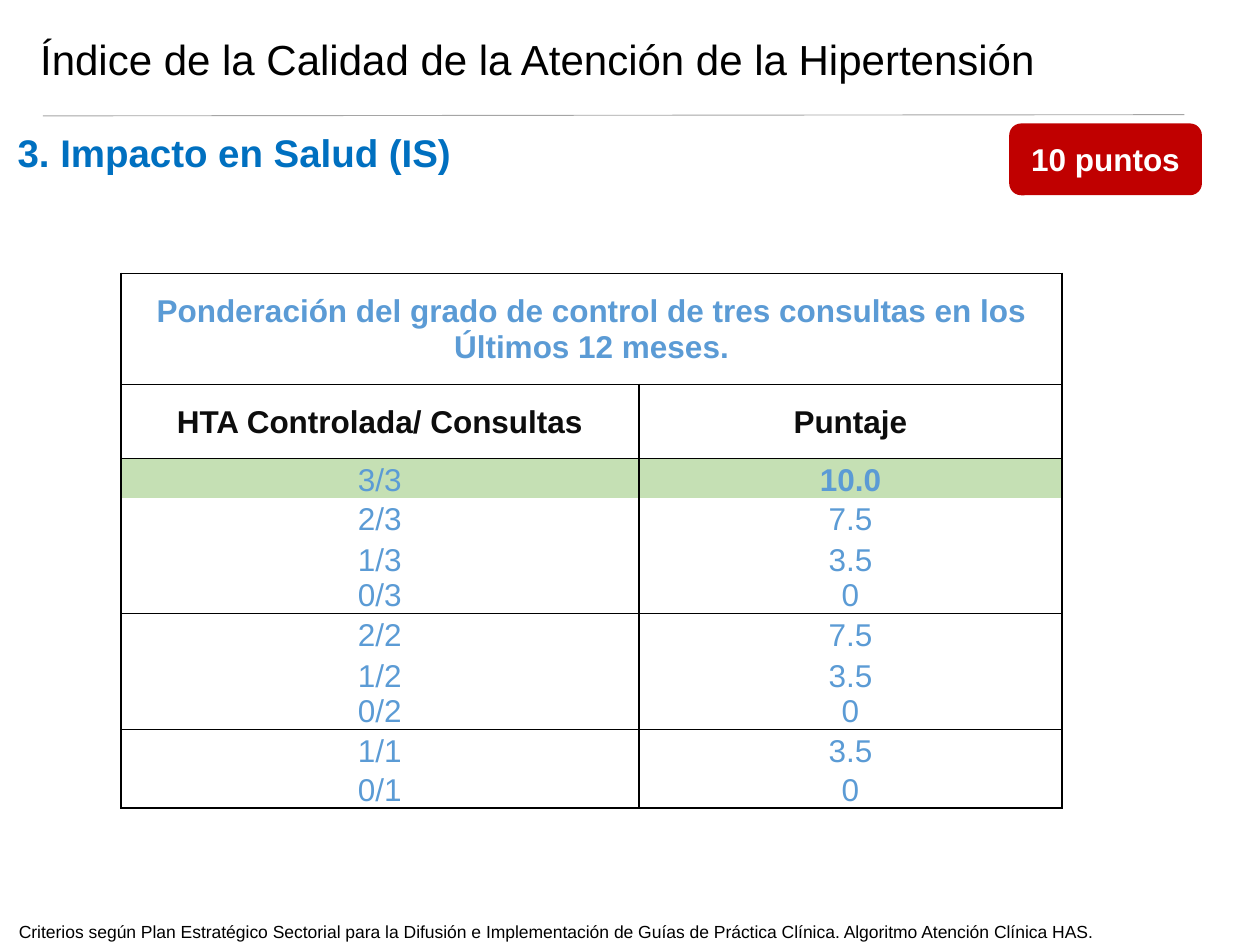
from dataclasses import dataclass

from lxml import etree
from pptx import Presentation
from pptx.dml.color import RGBColor
from pptx.enum.shapes import MSO_CONNECTOR, MSO_SHAPE
from pptx.enum.text import MSO_ANCHOR, PP_ALIGN
from pptx.oxml.ns import qn
from pptx.util import Inches, Pt

CENTER, JUSTIFY, LEFT = PP_ALIGN.CENTER, PP_ALIGN.JUSTIFY, PP_ALIGN.LEFT
MIDDLE, BOTTOM, TOP = MSO_ANCHOR.MIDDLE, MSO_ANCHOR.BOTTOM, MSO_ANCHOR.TOP
ROUNDED = MSO_SHAPE.ROUNDED_RECTANGLE
STRAIGHT = MSO_CONNECTOR.STRAIGHT

BLACK, WHITE, RED, GRAY = "000000", "FFFFFF", "C00000", "A5A5A5"
HEADING_BLUE, TABLE_BLUE = "0070C0", "5B9BD5"
HEADER_INK, BEST_GREEN = "0D0D0D", "C5E0B4"


@dataclass(frozen=True)
class Style:
    size: int
    color: str
    bold: bool = False
    align: PP_ALIGN = LEFT


@dataclass(frozen=True)
class Row:
    """One table row; a rule is drawn under it when it closes a group."""
    height: float
    texts: tuple[str, ...]
    closes_group: bool = False
    fill: str | None = None


TITLE_STYLE = Style(18, TABLE_BLUE, True, CENTER)
HEADER_STYLE = Style(18, HEADER_INK, True, CENTER)
SCORE_STYLE = Style(18, TABLE_BLUE, False, CENTER)
ROWS = [
    Row(0.88, ("Ponderación del grado de control de tres consultas en los "
               "Últimos 12 meses.", ""), True),
    Row(0.59, ("HTA Controlada/ Consultas", "Puntaje"), True),
    Row(0.31, ("3/3", "10.0"), fill=BEST_GREEN),
    Row(0.31, ("2/3", "7.5")),
    Row(0.61, ("1/3\n0/3", "3.5\n0"), True),
    Row(0.31, ("2/2", "7.5")),
    Row(0.61, ("1/2\n0/2", "3.5\n0"), True),
    Row(0.31, ("1/1", "3.5")),
    Row(0.31, ("0/1", "0"), True),
]
COLUMN_WIDTHS = (4.11, 3.36)


def rgb(value: str) -> RGBColor:
    return RGBColor.from_string(value)


def write(frame, text: str, style: Style, line_spacing=None) -> None:
    frame.text = text
    for paragraph in frame.paragraphs:
        paragraph.alignment = style.align
        if line_spacing is not None:
            paragraph.line_spacing = line_spacing
        for run in paragraph.runs:
            run.font.name = "Arial"
            run.font.size = Pt(style.size)
            run.font.bold = style.bold
            run.font.color.rgb = rgb(style.color)


def add_text(slide, box: tuple[float, ...], text: str, style: Style,
             insets: tuple[float, float] = (0.04, 0.02), line_spacing=None) -> None:
    frame = slide.shapes.add_textbox(*map(Inches, box)).text_frame
    frame.word_wrap = True
    frame.vertical_anchor = TOP
    frame.margin_left = frame.margin_right = Inches(insets[0])
    frame.margin_top = frame.margin_bottom = Inches(insets[1])
    write(frame, text, style, line_spacing)


def add_divider(slide) -> None:
    divider = slide.shapes.add_connector(
        STRAIGHT, Inches(0.34), Inches(0.92), Inches(9.4), Inches(0.91))
    divider.line.color.rgb = rgb(GRAY)
    divider.line.width = Pt(0.5)
    etree.SubElement(divider._element.spPr, qn("a:effectLst"))


def add_points_badge(slide) -> None:
    badge = slide.shapes.add_shape(
        ROUNDED, Inches(8.01), Inches(0.98), Inches(1.53), Inches(0.57))
    badge.shadow.inherit = False
    badge.fill.solid()
    badge.fill.fore_color.rgb = rgb(RED)
    badge.line.fill.background()
    badge.text_frame.vertical_anchor = MIDDLE
    write(badge.text_frame, "10 puntos", Style(18, WHITE, True, CENTER))


def set_borders(cell, top: bool, bottom: bool) -> None:
    """Draw both sides of a cell, and its top and bottom where asked."""
    properties = cell._tc.get_or_add_tcPr()
    edges = {"a:lnL": True, "a:lnR": True, "a:lnT": top, "a:lnB": bottom}
    for position, (tag, visible) in enumerate(edges.items()):
        edge = etree.Element(qn(tag), w=str(Pt(1)))
        if visible:
            fill = etree.SubElement(edge, qn("a:solidFill"))
            etree.SubElement(fill, qn("a:srgbClr"), val=BLACK)
        else:
            etree.SubElement(edge, qn("a:noFill"))
        properties.insert(position, edge)


def cell_style(row_index: int, text: str) -> Style:
    if row_index == 0:
        return TITLE_STYLE
    if row_index == 1:
        return HEADER_STYLE
    return Style(18, TABLE_BLUE, text == "10.0", CENTER)


def add_score_table(slide) -> None:
    height = sum(row.height for row in ROWS)
    table = slide.shapes.add_table(
        len(ROWS), len(COLUMN_WIDTHS), Inches(0.96), Inches(2.17),
        Inches(sum(COLUMN_WIDTHS)), Inches(height)).table
    table.first_row = table.horz_banding = False
    for column, width in zip(table.columns, COLUMN_WIDTHS):
        column.width = Inches(width)
    for index, row in enumerate(ROWS):
        table.rows[index].height = Inches(row.height)
        starts_group = index == 0 or ROWS[index - 1].closes_group
        for cell, text in zip(table.rows[index].cells, row.texts):
            cell.margin_left = cell.margin_right = cell.margin_top = Inches(0.01)
            cell.margin_bottom = 0
            cell.vertical_anchor = MIDDLE if index < 2 else BOTTOM
            if row.fill:
                cell.fill.solid()
                cell.fill.fore_color.rgb = rgb(row.fill)
            else:
                cell.fill.background()
            set_borders(cell, starts_group, row.closes_group)
            write(cell.text_frame, text, cell_style(index, text))
    table.cell(0, 0).merge(table.cell(0, 1))


def main() -> None:
    deck = Presentation()
    deck.slide_width, deck.slide_height = Inches(10), Inches(7.5)
    slide = deck.slides.add_slide(deck.slide_layouts[6])
    add_divider(slide)
    add_text(slide, (0.22, 0.26, 9.52, 0.82),
             "Índice de la Calidad de la Atención de la Hipertensión",
             Style(24, BLACK), insets=(0.1, 0.05), line_spacing=0.9)
    add_text(slide, (0.1, 1, 6.65, 0.41), "3. Impacto en Salud (IS)",
             Style(22, HEADING_BLUE, True, JUSTIFY))
    add_points_badge(slide)
    add_score_table(slide)
    add_text(slide, (0.11, 7.15, 9.47, 0.35),
             "Criterios según Plan Estratégico Sectorial para la Difusión e "
             "Implementación de Guías de Práctica Clínica. Algoritmo Atención "
             "Clínica HAS.", Style(10, BLACK), line_spacing=Pt(22))
    deck.save("out.pptx")


if __name__ == "__main__":
    main()
